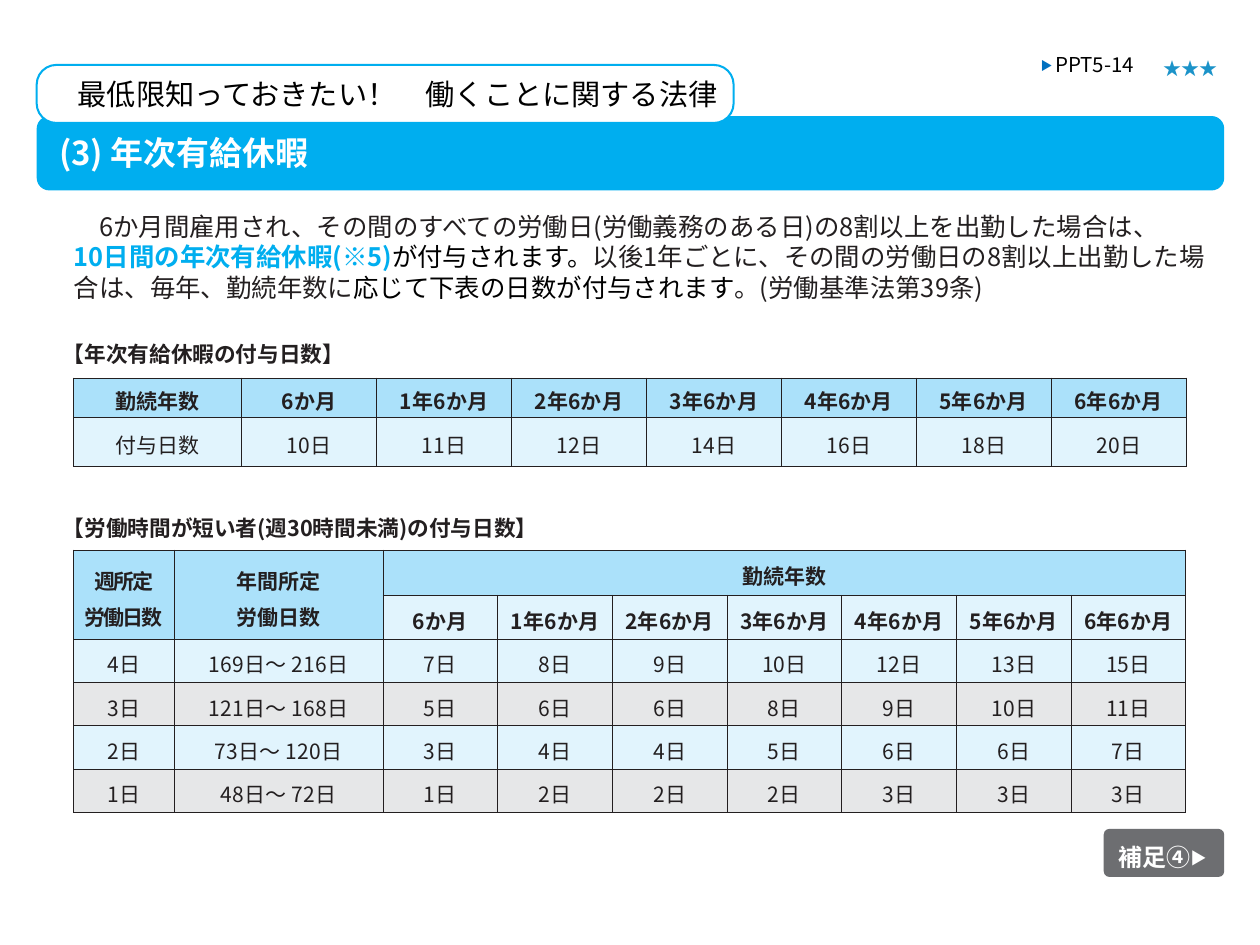
from dataclasses import dataclass, field

from lxml.etree import SubElement
from pptx import Presentation
from pptx.dml.color import RGBColor
from pptx.enum.shapes import MSO_SHAPE as Preset
from pptx.enum.text import MSO_ANCHOR as Anchor, MSO_AUTO_SIZE as AutoSize, PP_ALIGN as Align
from pptx.oxml.ns import qn
from pptx.util import Cm, Pt


@dataclass(frozen=True)
class Theme:
    font: str = "Noto Sans CJK JP"
    accent: str = "00AEEF"
    ink: str = "231F20"
    black: str = "000000"
    white: str = "FFFFFF"
    header: str = "ABE1FA"
    pale: str = "E1F4FD"
    grey: str = "E6E7E8"
    button: str = "6D6E71"
    marker: str = "0070C0"
    star: str = "1B93C9"
    title: float = 18.8
    series: float = 16.7
    arrow: float = 16
    body: float = 14.5
    supplement: float = 13.7
    caption: float = 12.4
    cell: float = 12
    page: float = 11.7
    rating: float = 10.3


THEME = Theme()


@dataclass(frozen=True)
class Box:
    left: float
    top: float
    width: float
    height: float

    def lengths(self) -> tuple:
        return Cm(self.left), Cm(self.top), Cm(self.width), Cm(self.height)


@dataclass(frozen=True)
class Span:
    text: str
    size: float
    color: str = THEME.ink
    bold: bool = False
    baseline: int = 0
    spacing: int = 0


@dataclass(frozen=True)
class Panel:
    box: Box
    corner: float
    fill: str
    line: str = ""


@dataclass(frozen=True)
class Label:
    box: Box
    paragraphs: list[list[Span]]
    indent: float = 0.05
    wrap: bool = True


@dataclass(frozen=True)
class Entry:
    text: str
    fill: str
    bold: bool = False
    spacing: int = 10
    anchor: Anchor = Anchor.MIDDLE
    open_side: str = ""


@dataclass(frozen=True)
class Grid:
    left: float
    top: float
    columns: list[float]
    rows: list[float]
    entries: dict[tuple[int, int], Entry]
    merges: list[tuple[int, int, int, int]] = field(default_factory=list)


def add_span(paragraph, span: Span) -> None:
    run = paragraph.add_run()
    run.text = span.text
    run.font.size = Pt(span.size)
    run.font.bold = span.bold
    run.font.name = THEME.font
    run.font.color.rgb = RGBColor.from_string(span.color)
    properties = run.font._element
    SubElement(properties, qn("a:ea")).set("typeface", THEME.font)
    if span.baseline:
        properties.set("baseline", str(span.baseline))
    if span.spacing:
        properties.set("spc", str(span.spacing))


def draw_panel(slide, panel: Panel) -> None:
    shape = slide.shapes.add_shape(Preset.ROUNDED_RECTANGLE, *panel.box.lengths())
    shape.adjustments[0] = panel.corner
    shape.shadow.inherit = False
    shape.fill.solid()
    shape.fill.fore_color.rgb = RGBColor.from_string(panel.fill)
    if panel.line:
        shape.line.color.rgb = RGBColor.from_string(panel.line)
        shape.line.width = Pt(1.17)
    else:
        shape.line.fill.background()


def write_label(shape, label: Label) -> None:
    shape.left, shape.top, shape.width, shape.height = label.box.lengths()
    frame = shape.text_frame
    frame.word_wrap = label.wrap
    frame.auto_size = AutoSize.NONE
    frame.vertical_anchor = Anchor.TOP
    frame.margin_left = frame.margin_right = frame.margin_bottom = 0
    frame.margin_top = Cm(0.03)
    for index, spans in enumerate(label.paragraphs):
        paragraph = frame.add_paragraph() if index else frame.paragraphs[0]
        paragraph.alignment = Align.LEFT
        paragraph.line_spacing = 1.0
        paragraph.space_before = Pt(0)
        properties = paragraph._p.get_or_add_pPr()
        properties.set("marL", str(Cm(label.indent)))
        properties.set("indent", "0")
        for span in spans:
            add_span(paragraph, span)


def draw_label(slide, label: Label) -> None:
    write_label(slide.shapes.add_textbox(*label.box.lengths()), label)


def outline_cell(cell, open_side: str) -> None:
    properties = cell._tc.get_or_add_tcPr()
    for side in ("lnL", "lnR", "lnT", "lnB"):
        border = SubElement(properties, qn(f"a:{side}"), w=str(Pt(0.5)))
        if side == open_side:
            SubElement(border, qn("a:noFill"))
        else:
            SubElement(SubElement(border, qn("a:solidFill")), qn("a:srgbClr"), val=THEME.ink)


def fill_cell(cell, entry: Entry) -> None:
    cell.vertical_anchor = entry.anchor
    cell.fill.solid()
    cell.fill.fore_color.rgb = RGBColor.from_string(entry.fill)
    paragraph = cell.text_frame.paragraphs[0]
    paragraph.alignment = Align.CENTER
    add_span(paragraph, Span(entry.text, THEME.cell, bold=entry.bold, spacing=entry.spacing))


def draw_grid(slide, grid: Grid) -> None:
    box = Box(grid.left, grid.top, sum(grid.columns), sum(grid.rows))
    table = slide.shapes.add_table(len(grid.rows), len(grid.columns), *box.lengths()).table
    table.first_row = table.horz_banding = False
    for column, width in zip(table.columns, grid.columns):
        column.width = Cm(width)
    for row, height in zip(table.rows, grid.rows):
        row.height = Cm(height)
    for row in range(len(grid.rows)):
        for column in range(len(grid.columns)):
            cell = table.cell(row, column)
            cell.margin_left = cell.margin_right = cell.margin_bottom = 0
            cell.margin_top = Cm(0.11)
            entry = grid.entries.get((row, column))
            outline_cell(cell, entry.open_side if entry else "")
            if entry:
                fill_cell(cell, entry)
    for top, left, bottom, right in grid.merges:
        table.cell(top, left).merge(table.cell(bottom, right))


def main() -> None:
    deck = Presentation()
    deck.slide_width, deck.slide_height = Cm(25.4), Cm(19.05)
    slide = deck.slides.add_slide(deck.slide_layouts[5])

    draw_panel(slide, Panel(Box(0.74, 2.34, 23.94, 1.5), 0.17, THEME.accent))
    draw_panel(slide, Panel(Box(0.74, 1.31, 14.05, 1.17), 0.34, THEME.white, THEME.accent))
    draw_panel(slide, Panel(Box(22.25, 16.71, 2.43, 0.97), 0.12, THEME.button))

    heading = slide.shapes.title
    slide.shapes._spTree.append(heading._element)
    write_label(heading, Label(Box(1.14, 2.64, 23.06, 0.84),
                               [[Span("(3) 年次有給休暇", THEME.title, THEME.white, True)]]))

    rule = [
        [Span("　6か月間雇用され、その間のすべての労働日(労働義務のある日)の8割以上を出勤した場合は、", THEME.body)],
        [Span("10日間の年次有給休暇(※5)", THEME.body, THEME.accent, True),
         Span("が付与されます。", THEME.body, THEME.black),
         Span("以後1年ごとに、その間の労働日の8割以上出勤した場合は、毎年、勤続年数に", THEME.body),
         Span("応じて下表の日数が付与されます", THEME.body, THEME.black),
         Span("。(労働基準法第39条)", THEME.body)],
    ]
    for label in (
        Label(Box(1.52, 1.5, 14.15, 0.76),
              [[Span("最低限知っておきたい！　働くことに関する法律", THEME.series, THEME.black)]]),
        Label(Box(1.14, 4.22, 23.27, 2), rule, 0.35),
        Label(Box(1.22, 6.84, 14.15, 0.56), [[Span("【年次有給休暇の付与日数】", THEME.caption, bold=True)]]),
        Label(Box(1.22, 10.34, 14.15, 0.56),
              [[Span("【労働時間が短い者(週30時間未満)の付与日数】", THEME.caption, bold=True)]]),
        Label(Box(22.5, 16.87, 2.34, 0.61),
              [[Span("補足④", THEME.supplement, THEME.white, True),
                Span("▶", THEME.arrow, THEME.white, True, 7000)]]),
        Label(Box(20.93, 1.02, 2.51, 0.53),
              [[Span("▶ ", THEME.page, THEME.marker, baseline=9000),
                Span("PPT5-14", THEME.page, THEME.black)]]),
        Label(Box(23.45, 1.12, 1.2, 0.56), [[Span("★★★", THEME.rating, THEME.star)]], 0, False),
    ):
        draw_label(slide, label)

    service = ["6か月"] + [f"{year}年6か月" for year in range(1, 7)]
    full_time = {(0, 0): Entry("勤続年数", THEME.header, True),
                 (1, 0): Entry("付与日数", THEME.pale)}
    for column, (years, days) in enumerate(zip(service, (10, 11, 12, 14, 16, 18, 20)), 1):
        full_time[0, column] = Entry(years, THEME.header, True)
        full_time[1, column] = Entry(f"{days}日", THEME.pale)
    draw_grid(slide, Grid(1.48, 7.62, [3.39] + [2.72] * 7, [0.79, 0.99], full_time))

    part_time = {(0, 2): Entry("勤続年数", THEME.header, True)}
    for column, (period, spacing) in enumerate((("週所定", -120), ("年間所定", 10))):
        part_time[0, column] = Entry(period, THEME.header, True, spacing, Anchor.BOTTOM, "lnB")
        part_time[1, column] = Entry("労働日数", THEME.header, True, spacing, Anchor.TOP, "lnT")
    for column, years in enumerate(service, 2):
        part_time[1, column] = Entry(years, THEME.pale, True)
    granted = [
        (4, 169, 216, (7, 8, 9, 10, 12, 13, 15)),
        (3, 121, 168, (5, 6, 6, 8, 9, 10, 11)),
        (2, 73, 120, (3, 4, 4, 5, 6, 6, 7)),
        (1, 48, 72, (1, 2, 2, 2, 3, 3, 3)),
    ]
    for row, (weekly, low, high, leave) in enumerate(granted, 2):
        texts = [f"{weekly}日", f"{low}日～ {high}日"] + [f"{days}日" for days in leave]
        for column, text in enumerate(texts):
            part_time[row, column] = Entry(text, THEME.grey if row % 2 else THEME.pale)
    service_width = (22.43 - 2.03 - 4.21) / len(service)
    draw_grid(slide, Grid(1.48, 11.09, [2.03, 4.21] + [service_width] * len(service),
                          [0.91, 0.89] + [0.87] * 4, part_time, [(0, 2, 0, 8)]))
    deck.save("out.pptx")


if __name__ == "__main__":
    main()
